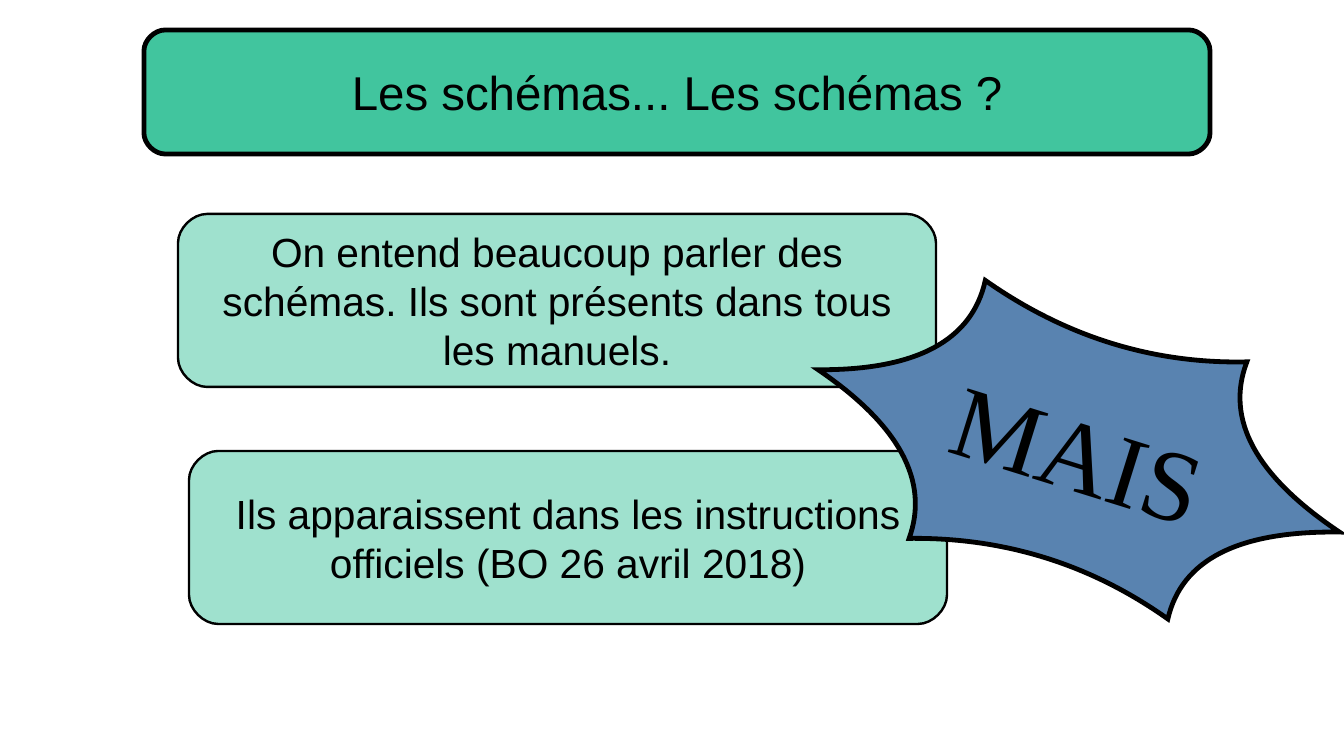
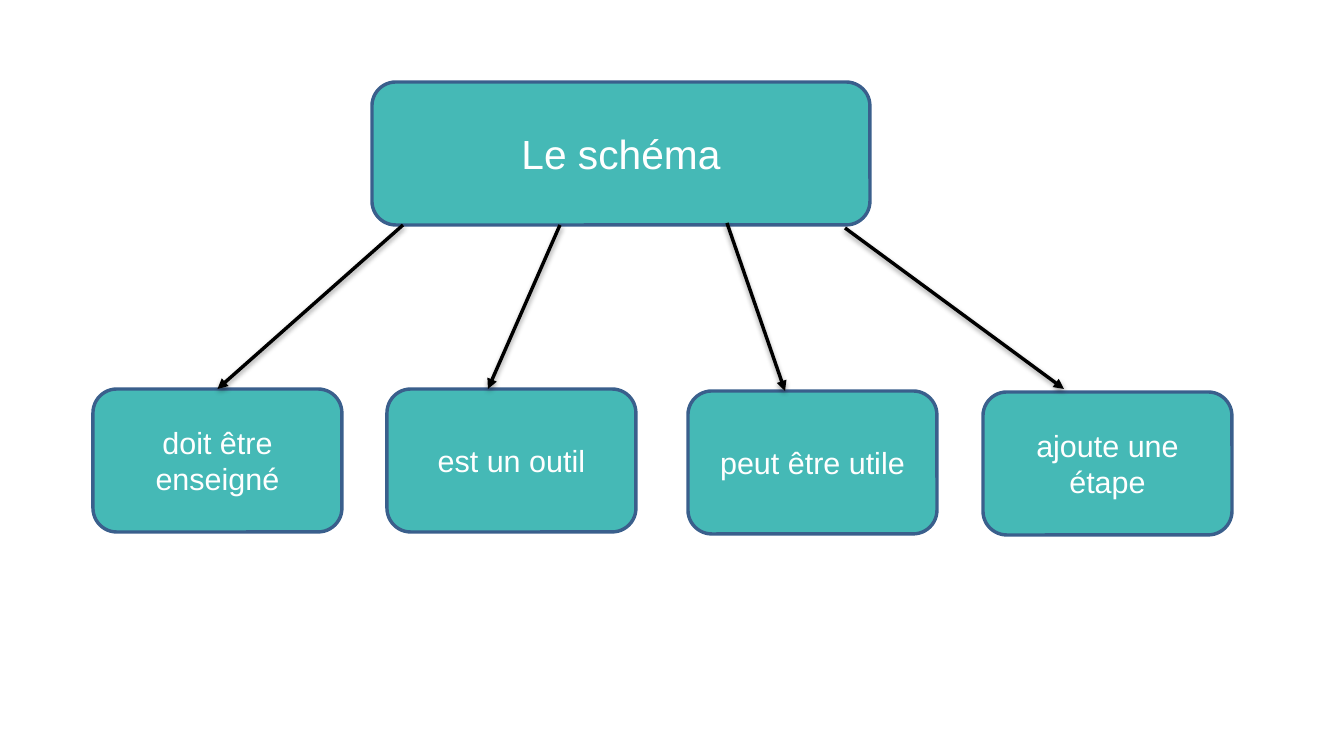
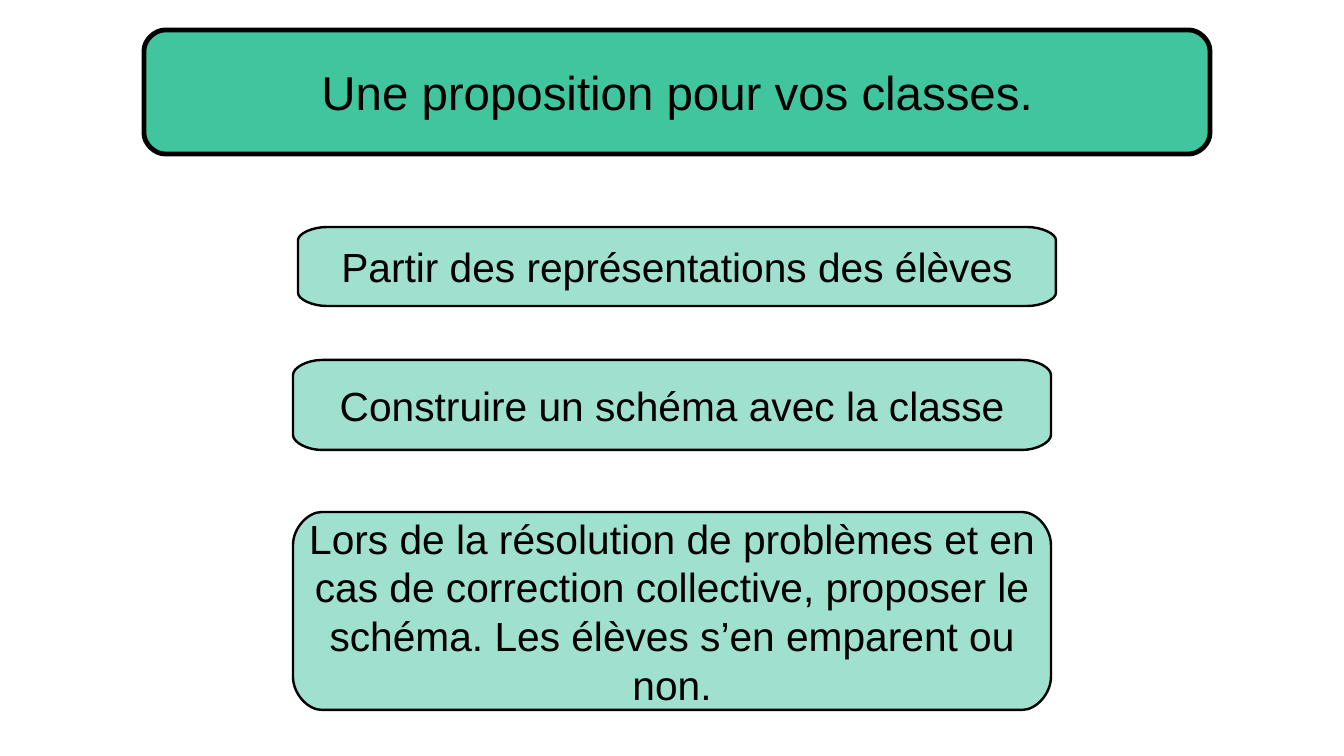
from lxml import etree
from pptx import Presentation
from pptx import util as u
from pptx.dml import color
from pptx.enum import shapes, text
from pptx.oxml import ns

PX = 7495  # EMU in one px
COLORS = {
    "title": "41C59E",
    "node": "45B9B6",
    "node_line": "3A5F8C",
    "burst": "5983B0",
    "ink": "000000",
    "white": "FFFFFF",
}
TITLE_BOX, TITLE_CORNER = (144, 30, 1066, 124), 21
BODY_WIDTH, BODY_CORNER = 758, 29
NODE_SIZE = (249, 143)


def px(*lengths):
    return [u.Emu(round(length * PX)) for length in lengths]


def rgb(name):
    return color.RGBColor.from_string(COLORS[name])


def style(shape, fill, line, line_width, alpha=None):
    shape.shadow.inherit = False
    shape.fill.solid()
    shape.fill.fore_color.rgb = rgb(fill)
    if alpha is not None:
        tint = shape.fill._xPr.find(".//" + ns.qn("a:srgbClr"))
        etree.SubElement(tint, ns.qn("a:alpha"), val=str(alpha * 1000))
    shape.line.color.rgb = rgb(line)
    shape.line.width = u.Pt(line_width)


def write(shape, words, size, ink="ink", font="Arial", insets=(12, 6)):
    """Centre the words in the shape; insets are horizontal and vertical px."""
    frame = shape.text_frame
    frame.word_wrap = True
    frame.vertical_anchor = text.MSO_ANCHOR.MIDDLE
    frame.margin_left = frame.margin_right = px(insets[0])[0]
    frame.margin_top = frame.margin_bottom = px(insets[1])[0]
    para = frame.paragraphs[0]
    para.text = words
    para.alignment = text.PP_ALIGN.CENTER
    para.font.size = u.Pt(size)
    para.font.name = font
    para.font.color.rgb = rgb(ink)


def add_outline(page, start, segments):
    """Add a closed freeform; a segment has one point (line) or three (curve)."""
    builder = page.shapes.build_freeform(*px(*start))
    builder.add_line_segments(
        [px(*point) for segment in segments for point in segment], close=True)
    outline = builder.convert_to_shape()
    lines = iter(list(outline._element.iter(ns.qn("a:lnTo"))))
    for segment in segments:
        first, *others = [next(lines) for _ in segment]
        if others:
            first.tag = ns.qn("a:cubicBezTo")
            for other in others:
                first.append(other[0])
                other.getparent().remove(other)
    return outline


def add_panel(page, box, corner):
    """Box with rounded corners, one sixth of its height tall."""
    left, top, width, height = box
    right, bottom, rise = left + width, top + height, height / 6
    corners = [(left, top, 1, 1), (left, bottom, 1, -1),
               (right, bottom, -1, -1), (right, top, -1, 1)]
    segments = []
    for index, (x, y, across, down) in enumerate(corners):
        dx, dy = across * corner, down * rise
        bend = [(x + dx, y), (x + dx / 2, y), (x, y + dy / 2), (x, y + dy)]
        if index % 2:
            bend.reverse()
        if index == 0:
            start = bend[0]
        else:
            segments.append(bend[:1])
        segments.append(bend[1:])
    return add_outline(page, start, segments)


def add_title(page, words):
    title = add_panel(page, TITLE_BOX, TITLE_CORNER)
    style(title, "title", "ink", 2.83)
    write(title, words, 28, insets=(14, 9))


def add_statement(page, left, top, height, words):
    statement = add_panel(page, (left, top, BODY_WIDTH, height), BODY_CORNER)
    style(statement, "title", "ink", 1.42, alpha=50)
    write(statement, words, 24, insets=(13, 7))


def add_burst(page, cx, cy, words):
    """Tilted six-pointed star whose sides curve towards its centre."""
    tips = [(273, 0), (135, 134), (-136, 134), (-273, 0), (-140, -135), (134, -135)]
    pulls = [(128, 43), (0, 90), (-132, 43), (-132, -43), (0, -90), (128, -43)]

    def toward(tip, pull):
        return [c + a + (b - a) * 2 / 3 for c, a, b in zip((cx, cy), tip, pull)]

    segments = [
        (toward(tip, pull), toward(following, pull),
         (cx + following[0], cy + following[1]))
        for tip, pull, following in zip(tips, pulls, tips[1:] + tips[:1])
    ]
    burst = add_outline(page, (cx + tips[0][0], cy + tips[0][1]), segments)
    burst.rotation = 17.3
    style(burst, "burst", "ink", 2.83)
    etree.SubElement(burst.line._get_or_add_ln(), ns.qn("a:miter"), lim="800000")
    write(burst, words, 60, font="Times New Roman", insets=(14, 9))


def add_node(page, box, words, size):
    node = page.shapes.add_shape(shapes.MSO_SHAPE.ROUNDED_RECTANGLE, *px(*box))
    style(node, "node", "node_line", 2)
    write(node, words, size, ink="white")
    return node


def add_arrow(page, start, end):
    arrow = page.shapes.add_connector(
        shapes.MSO_CONNECTOR.STRAIGHT, *px(*start, *end))
    arrow.line.color.rgb = rgb("ink")
    arrow.line.width = u.Pt(2)
    etree.SubElement(arrow.line._get_or_add_ln(), ns.qn("a:tailEnd"), type="triangle")
    return arrow


def statements_slide(page, title, statements):
    add_title(page, title)
    for statement in statements:
        add_statement(page, *statement)


def tree_slide(page, root, branches):
    add_node(page, (372, 82, 498, 143), root, 24)
    nodes = [add_node(page, (left, top, *NODE_SIZE), words, 18)
             for left, top, words, _, _ in branches]
    arrows = [add_arrow(page, start, end) for *_, start, end in branches]
    arrows[0].end_connect(nodes[0], 0)


def main():
    deck = Presentation()
    deck.slide_width, deck.slide_height = px(1344, 756)
    blank = deck.slide_layouts[6]
    intro, tree, proposal = [deck.slides.add_slide(blank) for _ in range(3)]

    statements_slide(intro, "Les schémas... Les schémas ?", [
        (178, 214, 173, "On entend beaucoup parler des schémas. "
                        "Ils sont présents dans tous les manuels."),
        (189, 451, 173, "Ils apparaissent dans les instructions officiels "
                        "(BO 26 avril 2018)"),
    ])
    add_burst(intro, 1079, 451, "MAIS")

    tree_slide(tree, "Le schéma", [
        (93, 389, "doit être enseigné", (403, 225), (217, 389)),
        (387, 389, "est un outil", (560, 225), (488, 389)),
        (688, 391, "peut être utile", (727, 223), (785, 391)),
        (983, 392, "ajoute une étape", (845, 228), (1064, 389)),
    ])

    statements_slide(proposal, "Une proposition pour vos classes.", [
        (298, 227, 79, "Partir des représentations des élèves"),
        (293, 512, 198, "Lors de la résolution de problèmes et en cas de "
                        "correction collective, proposer le schéma. "
                        "Les élèves s’en emparent ou non."),
        (293, 360, 90, "Construire un schéma avec la classe"),
    ])
    deck.save("out.pptx")


if __name__ == "__main__":
    main()
